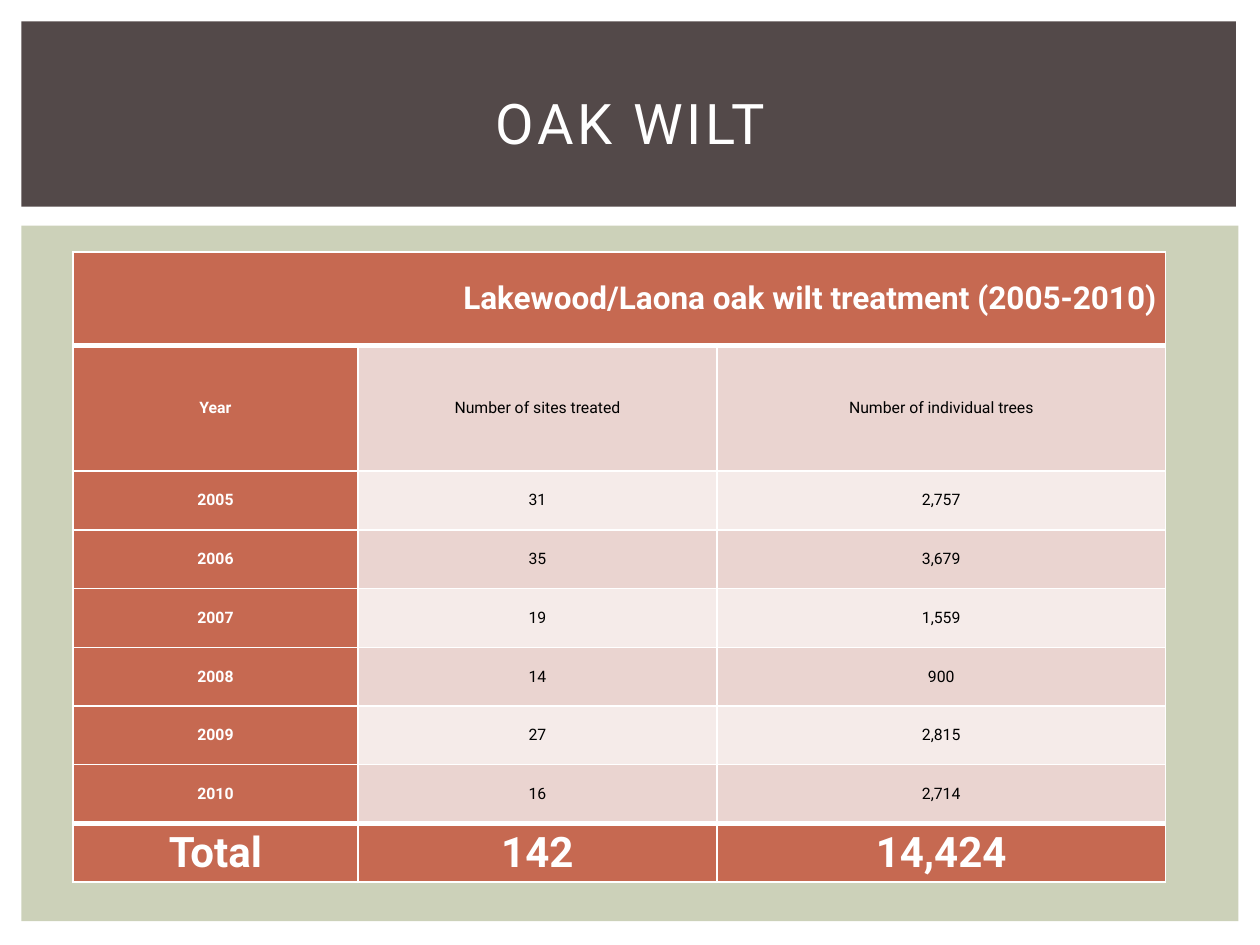
from lxml import etree
from pptx import Presentation
from pptx.dml.color import RGBColor
from pptx.enum.shapes import MSO_SHAPE
from pptx.enum.text import MSO_ANCHOR, PP_ALIGN
from pptx.oxml.ns import qn
from pptx.util import Inches, Pt

RECTANGLE = MSO_SHAPE.RECTANGLE
MIDDLE = MSO_ANCHOR.MIDDLE
CENTER, RIGHT = PP_ALIGN.CENTER, PP_ALIGN.RIGHT

GRID_COLUMNS, GRID_ROWS = 100, 75
TITLE_ONLY = 5
WHITE, BLACK = "FFFFFF", "000000"
BROWN, SAGE, RUST = "534949", "CCD1B9", "C66951"
BANDS = ("EAD4D0", "F5EBE9")

HEADING = "Lakewood/Laona oak wilt treatment (2005-2010)"
RECORDS = [
    ("Year", "Number of sites treated", "Number of individual trees"),
    ("2005", "31", "2,757"),
    ("2006", "35", "3,679"),
    ("2007", "19", "1,559"),
    ("2008", "14", "900"),
    ("2009", "27", "2,815"),
    ("2010", "16", "2,714"),
    ("Total", "142", "14,424"),
]
COLUMN_WIDTHS = (22.6, 28.5, 35.6)
ROW_HEIGHTS = (7.4, 10) + (4.66,) * 7


def color(value):
    return RGBColor.from_string(value)


class SlideBuilder:
    """Holds the style and the current slide; lengths are grid units."""

    font = "Roboto"

    def __init__(self, deck):
        self.unit_x = deck.slide_width / GRID_COLUMNS
        self.unit_y = deck.slide_height / GRID_ROWS
        self.slide = deck.slides.add_slide(deck.slide_layouts[TITLE_ONLY])

    def place(self, left, top, width, height):
        """Turn grid units into slide lengths."""
        return (round(left * self.unit_x), round(top * self.unit_y),
                round(width * self.unit_x), round(height * self.unit_y))

    def set_text(self, frame, text, size, ink, bold=False, align=CENTER, gap=0):
        frame.text = text
        para = frame.paragraphs[0]
        para.alignment = align
        para.space_before = para.space_after = Pt(gap)
        span = para.runs[0]
        span.font.name = self.font
        span.font.size = Pt(size)
        span.font.bold = bold
        span.font.color.rgb = color(ink)
        return span

    def panel(self, fill, *area):
        box = self.slide.shapes.add_shape(RECTANGLE, *self.place(*area))
        box.shadow.inherit = False
        box.fill.solid()
        box.fill.fore_color.rgb = color(fill)
        box.line.fill.background()

    def title(self, text, *area):
        box = self.slide.shapes.title
        box.left, box.top, box.width, box.height = self.place(*area)
        box.text_frame.vertical_anchor = MIDDLE
        span = self.set_text(box.text_frame, text, 32, WHITE)
        span.font._element.set("spc", "200")
        self.slide.shapes._spTree.append(box._element)  # in front of the panels

    def borders(self, cell, top, bottom):
        properties = cell._tc.get_or_add_tcPr()
        edges = (("L", 1), ("R", 1), ("T", top), ("B", bottom))
        for index, (side, width) in enumerate(edges):
            line = etree.Element(qn(f"a:ln{side}"), w=str(Pt(width)))
            fill = etree.SubElement(line, qn("a:solidFill"))
            etree.SubElement(fill, qn("a:srgbClr"), val=WHITE)
            properties.insert(index, line)

    def cell(self, cell, fill, top=1, bottom=1):
        cell.fill.solid()
        cell.fill.fore_color.rgb = color(fill)
        cell.vertical_anchor = MIDDLE
        cell.margin_left = cell.margin_right = Inches(0.07)
        cell.margin_top = cell.margin_bottom = 0
        self.borders(cell, top, bottom)

    def table(self, heading, records, left, top):
        area = self.place(left, top, sum(COLUMN_WIDTHS), sum(ROW_HEIGHTS))
        table = self.slide.shapes.add_table(
            len(ROW_HEIGHTS), len(COLUMN_WIDTHS), *area).table
        for column, width in zip(table.columns, COLUMN_WIDTHS):
            column.width = round(width * self.unit_x)
        for row, height in zip(table.rows, ROW_HEIGHTS):
            row.height = round(height * self.unit_y)

        for cell in table.rows[0].cells:
            self.cell(cell, RUST, bottom=3)
        first = table.cell(0, 0)
        first.merge(table.cell(0, len(COLUMN_WIDTHS) - 1))
        self.set_text(first.text_frame, heading, 18, WHITE, True, RIGHT, gap=6)

        last = len(records) - 1
        for index, record in enumerate(records):
            total = index == last
            for column, text in enumerate(record):
                strong = total or column == 0
                cell = table.cell(index + 1, column)
                self.cell(cell, RUST if strong else BANDS[index % 2],
                          top=3 if index in (0, last) else 1,
                          bottom=3 if index == last - 1 else 1)
                self.set_text(cell.text_frame, text, 24 if total else 9,
                              WHITE if strong else BLACK, strong,
                              gap=2 if index == 0 else 1)


def main():
    deck = Presentation()
    deck.slide_width, deck.slide_height = Inches(10), Inches(7.5)
    builder = SlideBuilder(deck)
    builder.panel(SAGE, 1.7, 17.9, 96.6, 55.2)
    builder.panel(BROWN, 1.7, 1.7, 96.4, 14.7)
    builder.table(HEADING, RECORDS, 5.8, 20)
    builder.title("OAK WILT", 4.2, 3.9, 91.7, 11.5)
    deck.save("out.pptx")


if __name__ == "__main__":
    main()
